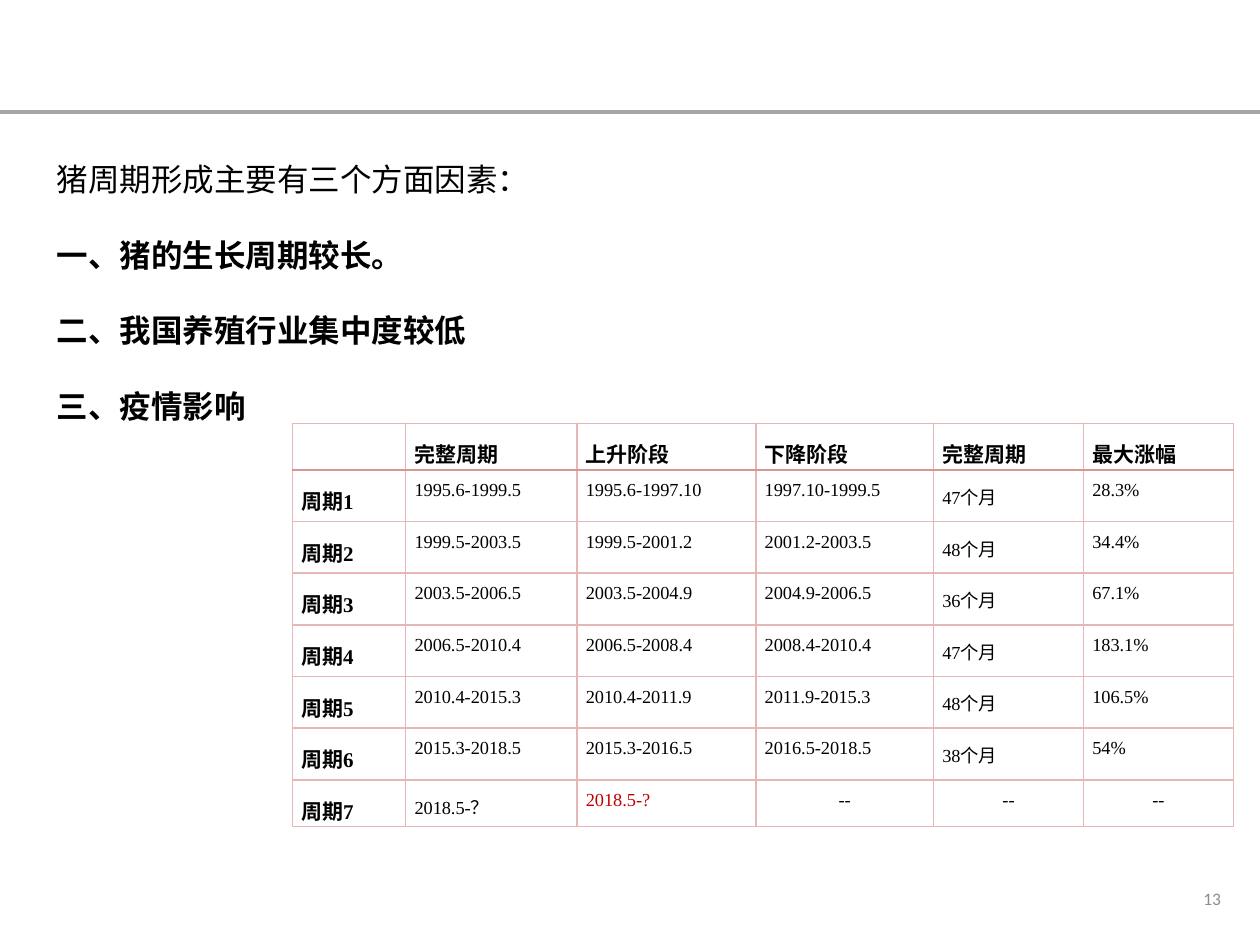
from typing import NamedTuple

from pptx import Presentation
from pptx.dml.color import RGBColor
from pptx.enum.shapes import MSO_CONNECTOR
from pptx.enum.text import MSO_ANCHOR, PP_ALIGN
from pptx.oxml.ns import qn
from pptx.util import Inches, Pt
from lxml.etree import SubElement, Element

BLACK, GREY, RED = "000000", "8C8C8C", "C00000"
PINK, ROSE, RULE = "E5B8B7", "D99594", "A6A6A6"
SERIF, SANS = "Times New Roman", "Calibri"


class Style(NamedTuple):
    size: float
    font: str
    color: str = BLACK
    bold: bool = False
    spacing: float = 1.0
    align: PP_ALIGN = PP_ALIGN.LEFT


LEAD = Style(18, SANS, spacing=2.0)
FACTOR = LEAD._replace(bold=True)
PAGE = Style(10, SANS, GREY, align=PP_ALIGN.RIGHT)
BODY = Style(10.5, SERIF, spacing=1.5)
LABEL = Style(12, SERIF, bold=True, spacing=1.5)
HEADER = LABEL._replace(align=PP_ALIGN.JUSTIFY)

FACTORS = [
    ("猪周期形成主要有三个方面因素：", LEAD),
    ("一、猪的生长周期较长。", FACTOR),
    ("二、我国养殖行业集中度较低", FACTOR),
    ("三、疫情影响", FACTOR),
]
CYCLES = [
    ("", "完整周期", "上升阶段", "下降阶段", "完整周期", "最大涨幅"),
    ("周期1", "1995.6-1999.5", "1995.6-1997.10", "1997.10-1999.5", "47个月", "28.3%"),
    ("周期2", "1999.5-2003.5", "1999.5-2001.2", "2001.2-2003.5", "48个月", "34.4%"),
    ("周期3", "2003.5-2006.5", "2003.5-2004.9", "2004.9-2006.5", "36个月", "67.1%"),
    ("周期4", "2006.5-2010.4", "2006.5-2008.4", "2008.4-2010.4", "47个月", "183.1%"),
    ("周期5", "2010.4-2015.3", "2010.4-2011.9", "2011.9-2015.3", "48个月", "106.5%"),
    ("周期6", "2015.3-2018.5", "2015.3-2016.5", "2016.5-2018.5", "38个月", "54%"),
    ("周期7", "2018.5-？", "2018.5-?", "--", "--", "--"),
]
COLUMN_WIDTHS = [0.9, 1.36, 1.42, 1.41, 1.19, 1.19]
ROW_HEIGHTS = [0.37] + [0.41] * 6 + [0.37]


def rgb(color: str) -> RGBColor:
    return RGBColor.from_string(color)


def write(paragraph, text: str, style: Style) -> None:
    paragraph.text = text
    paragraph.alignment = style.align
    paragraph.line_spacing = style.spacing
    for font in [paragraph.font] + [run.font for run in paragraph.runs]:
        font.size, font.name, font.bold = Pt(style.size), style.font, style.bold
        font.color.rgb = rgb(style.color)


def add_text(slide, left: float, top: float, width: float, height: float,
             lines: list[tuple[str, Style]]):
    box = slide.shapes.add_textbox(*map(Inches, (left, top, width, height)))
    frame = box.text_frame
    frame.word_wrap = True
    for i, (text, style) in enumerate(lines):
        write(frame.add_paragraph() if i else frame.paragraphs[0], text, style)
    return frame


def set_borders(cell, row: int) -> None:
    """The rule between header and body is darker and heavier."""
    heavy, light = (ROSE, 1.5), (PINK, 1)
    edges = {"L": light, "R": light,
             "T": heavy if row == 1 else light,
             "B": heavy if row == 0 else light}
    properties = cell._tc.get_or_add_tcPr()
    for i, (side, (color, width)) in enumerate(edges.items()):
        line = Element(qn(f"a:ln{side}"), w=str(Pt(width)))
        fill = SubElement(line, qn("a:solidFill"))
        SubElement(fill, qn("a:srgbClr"), val=color)
        properties.insert(i, line)


def cell_style(row: int, column: int, text: str) -> Style:
    if row == 0:
        return HEADER
    if column == 0:
        return LABEL
    if text == "--":
        return BODY._replace(align=PP_ALIGN.CENTER)
    return BODY._replace(color=RED) if text.endswith("?") else BODY


def add_cycle_table(slide) -> None:
    table = slide.shapes.add_table(
        len(CYCLES), len(COLUMN_WIDTHS), Inches(2.32), Inches(3.36),
        Inches(sum(COLUMN_WIDTHS)), Inches(sum(ROW_HEIGHTS))).table
    table.first_row = table.horz_banding = False
    for column, width in zip(table.columns, COLUMN_WIDTHS):
        column.width = Inches(width)
    for r, (values, height) in enumerate(zip(CYCLES, ROW_HEIGHTS)):
        table.rows[r].height = Inches(height)
        for c, text in enumerate(values):
            cell = table.cell(r, c)
            cell.margin_left = cell.margin_right = Inches(0.07)
            cell.margin_top = cell.margin_bottom = 0
            cell.fill.background()
            set_borders(cell, r)
            write(cell.text_frame.paragraphs[0], text, cell_style(r, c, text))


def main() -> None:
    deck = Presentation()
    deck.slide_width, deck.slide_height = Inches(10), Inches(7.5)
    slide = deck.slides.add_slide(deck.slide_layouts[6])

    # Rule under the header area
    rule = slide.shapes.add_connector(
        MSO_CONNECTOR.STRAIGHT, 0, Inches(0.89), Inches(10), Inches(0.89))
    rule.line.color.rgb = rgb(RULE)
    rule.line.width = Pt(2)
    SubElement(rule._element.spPr, qn("a:effectLst"))

    # Page number
    page = add_text(slide, 7.52, 6.93, 2.25, 0.4, [("13", PAGE)])
    page.vertical_anchor = MSO_ANCHOR.MIDDLE
    page.margin_left = page.margin_right = Inches(0.08)
    page.margin_top = page.margin_bottom = Inches(0.04)

    # Three factors and the table of past cycles
    add_text(slide, 0.35, 0.92, 7.72, 2.52, FACTORS)
    add_cycle_table(slide)

    deck.save("out.pptx")


if __name__ == "__main__":
    main()
